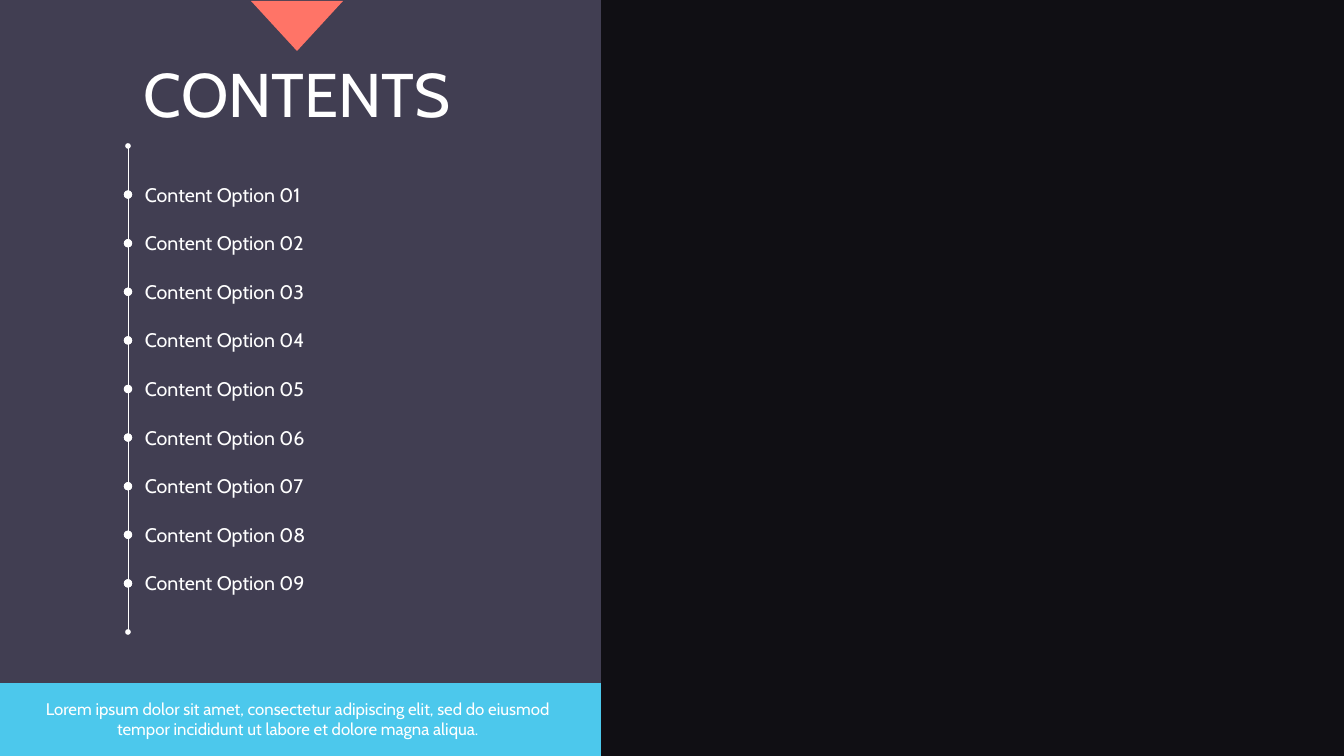
"""Build the contents slide with a dotted timeline of options."""
import pptx
import pptx.util
import pptx.dml.color
import pptx.enum.shapes
import pptx.enum.text
import pptx.oxml
import pptx.oxml.ns

TITLE = "CONTENTS"
ITEMS = [f"Content Option {n:02d}" for n in range(1, 10)]
NOTE = ("Lorem ipsum dolor sit amet, consectetur adipiscing elit, sed do eiusmod "
        "tempor incididunt ut labore et dolore magna aliqua.")

THEME = {
    "font": "Cabin", "title": 44, "item": 14, "note": 12,
    "base": "524E67", "shade": "000000", "band": "4CC8EC",
    "mark": "FF7467", "text": "FFFFFF", "line": 0.5,
}
SCALE = 914400 / 100.8
WIDE, HIGH = 1344, 756
PANEL = 601
BAND = 683
AXIS, TOP, END = 128, 146, 632

SHAPE = pptx.enum.shapes.MSO_SHAPE
ALIGN = pptx.enum.text.PP_ALIGN


def px(*sizes):
    return [pptx.util.Emu(round(size * SCALE)) for size in sizes]


def tint(name):
    return pptx.dml.color.RGBColor.from_string(THEME[name])


def add_block(slide, kind, box, color, alpha=100, turn=0):
    shape = slide.shapes.add_shape(kind, *px(*box))
    shape.shadow.inherit = False
    shape.fill.solid()
    shape.fill.fore_color.rgb = tint(color)
    shape.line.fill.background()
    shape.rotation = turn
    if alpha < 100:
        paint = shape.fill._xPr.find(".//" + pptx.oxml.ns.qn("a:srgbClr"))
        paint.append(pptx.oxml.parse_xml(
            f'<a:alpha {pptx.oxml.ns.nsdecls("a")} val="{alpha * 1000}"/>'))


def add_text(slide, text, box, size, align=ALIGN.LEFT):
    frame = slide.shapes.add_textbox(*px(*box)).text_frame
    frame.word_wrap = True
    frame.auto_size = pptx.enum.text.MSO_AUTO_SIZE.SHAPE_TO_FIT_TEXT
    para = frame.paragraphs[0]
    para.alignment = align
    run = para.add_run()
    run.text = text
    run.font.name = THEME["font"]
    run.font.size = pptx.util.Pt(THEME[size])
    run.font.color.rgb = tint("text")


def add_link(slide, start, stop, head, tail):
    kind = pptx.enum.shapes.MSO_CONNECTOR.STRAIGHT
    link = slide.shapes.add_connector(kind, *px(AXIS, start, AXIS, stop))
    link.line.color.rgb = tint("text")
    link.line.width = pptx.util.Pt(THEME["line"])
    space = pptx.oxml.ns.nsdecls("a")
    line = link.line._get_or_add_ln()
    for end, size in (("headEnd", head), ("tailEnd", tail)):
        line.append(pptx.oxml.parse_xml(
            f'<a:{end} {space} type="oval" w="{size}" len="{size}"/>'))
    line.getparent().append(pptx.oxml.parse_xml(f"<a:effectLst {space}/>"))


def main():
    deck = pptx.Presentation()
    deck.slide_width, deck.slide_height = px(WIDE, HIGH)
    slide = deck.slides.add_slide(deck.slide_layouts[6])
    slide.background.fill.solid()
    slide.background.fill.fore_color.rgb = tint("base")

    add_block(slide, SHAPE.RECTANGLE, (0, 0, WIDE, HIGH), "shade", alpha=80)
    add_block(slide, SHAPE.RECTANGLE, (0, 0, PANEL, HIGH), "base", alpha=75)
    add_block(slide, SHAPE.RECTANGLE, (0, BAND, PANEL, HIGH - BAND), "band")
    add_text(slide, TITLE, (96, 51, 403, 91), "title", align=ALIGN.CENTER)

    count = len(ITEMS) + 1
    stops = [TOP + (END - TOP) * i / count for i in range(count + 1)]
    sizes = ["sm"] + ["med"] * len(ITEMS) + ["sm"]
    for i in range(count):
        add_link(slide, stops[i], stops[i + 1], sizes[i], sizes[i + 1])
    for item, stop in zip(ITEMS, stops[1:]):
        add_text(slide, item, (135, stop - 17, 202, 34), "item")

    add_block(slide, SHAPE.ISOSCELES_TRIANGLE, (251, 1, 92, 50), "mark", turn=180)
    add_text(slide, NOTE, (8, 694, 580, 50), "note", align=ALIGN.CENTER)
    deck.save("out.pptx")


if __name__ == "__main__":
    main()
